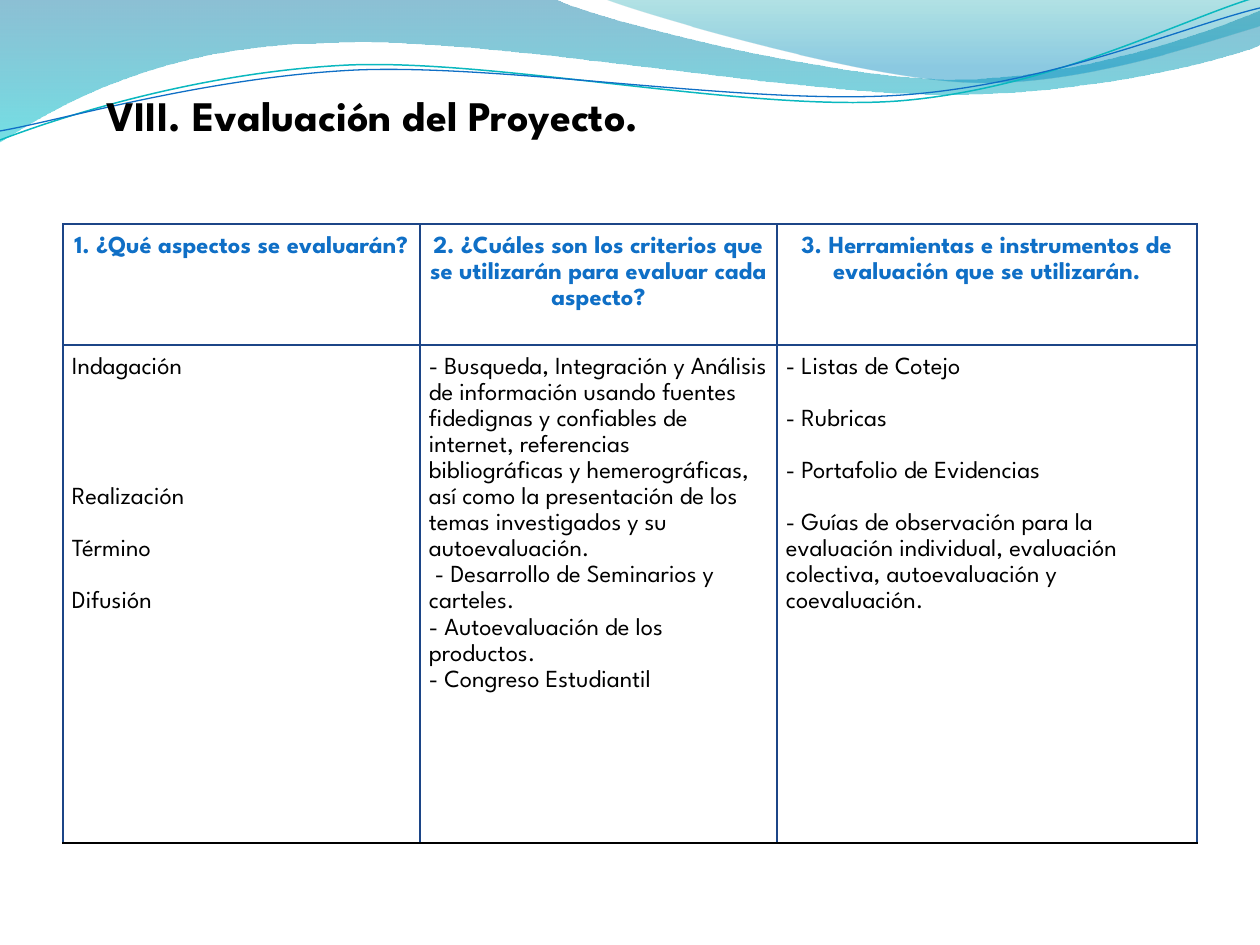
from lxml.etree import SubElement
from pptx import Presentation
from pptx.dml.color import RGBColor
from pptx.enum.text import MSO_ANCHOR, MSO_AUTO_SIZE, PP_ALIGN
from pptx.oxml.ns import qn
from pptx.util import Emu, Pt

FONT = "League Spartan"
BLUE, NAVY, BLACK = "0F6FC6", "1C4587", "000000"
LINE = 26

BAND = [(0, 0), (554, -1), (600, 21, 837, 79, 955, 79),
        (1075, 79, 1207, 33, 1260, 11), (1261, 45),
        (1239, 55, 1096, 96, 940, 94), (784, 94, 481, 35, 324, 43),
        (163, 45, 58, 105, -1, 142)]
CREST = [(604, -1), (641, 14, 859, 78, 969, 82),
         (1079, 87, 1211, 40, 1260, 26), (1260, 0)]
TEAL = [(0, 140), (60, 117, 199, 72, 349, 65),
        (498, 59, 747, 112, 898, 101), (1050, 89, 1182, 19, 1257, -3)]
DEEP = [(0, 131), (59, 121, 207, 77, 357, 70),
        (508, 64, 752, 106, 903, 95), (1053, 84, 1185, 26, 1260, 8)]

HEADS = ["1. ¿Qué aspectos se evaluarán?",
         "2. ¿Cuáles son los criterios que se utilizarán para evaluar cada aspecto?",
         "3. Herramientas e instrumentos de evaluación que se utilizarán."]
BODY = [
    [("Indagación", 0), ("Realización", 4), ("Término", 1), ("Difusión", 1)],
    [("- Busqueda, Integración y Análisis de información usando fuentes "
      "fidedignas y confiables de internet, referencias bibliográficas y "
      "hemerográficas, así como la presentación de los temas investigados "
      "y su autoevaluación.", 0),
     (" - Desarrollo de Seminarios y carteles.", 0),
     ("- Autoevaluación de los productos.", 0),
     ("- Congreso Estudiantil", 0)],
    [("- Listas de Cotejo", 0), ("- Rubricas", 1),
     ("- Portafolio de Evidencias", 1),
     ("- Guías de observación para la evaluación individual, evaluación "
      "colectiva, autoevaluación y coevaluación.", 1)],
]


def px(num):
    """Turn pixels into EMU."""
    return Emu(round(num * 914400 / 126))


def tint(code):
    """Turn a hex string into a colour."""
    return RGBColor.from_string(code)


def bend(shape, steps):
    """Turn the straight segments of six-value steps into cubic curves."""
    legs = list(shape._element.iter(qn("a:lnTo")))
    for leg, step in zip(legs, steps[1:]):
        if len(step) == 6:
            leg.tag = qn("a:cubicBezTo")
            leg.remove(leg[0])
            for x, y in zip(step[::2], step[1::2]):
                SubElement(leg, qn("a:pt"), x=str(px(x) - shape.left),
                           y=str(px(y) - shape.top))


def add_curve(slide, steps, close):
    """Draw a curved outline without a shadow."""
    ends = [(px(step[-2]), px(step[-1])) for step in steps]
    pen = slide.shapes.build_freeform(*ends[0])
    pen.add_line_segments(ends[1:], close=close)
    shape = pen.convert_to_shape()
    shape.shadow.inherit = False
    bend(shape, steps)
    return shape


def add_wave(slide, steps, stops):
    """Draw a wave with a see-through gradient from top to bottom."""
    wave = add_curve(slide, steps, True)
    wave.line.fill.background()
    wave.fill.gradient()
    wave.fill.gradient_angle = 270
    for stop, (place, code, alpha) in zip(wave.fill.gradient_stops, stops):
        stop.position = place
        stop.color.rgb = tint(code)
    tags = list(wave._element.spPr.iter(qn("a:srgbClr")))
    for tag, (place, code, alpha) in zip(tags, stops):
        SubElement(tag, qn("a:alpha"), val=str(alpha * 1000))


def add_thread(slide, steps, code, width):
    """Draw a thin open curve."""
    thread = add_curve(slide, steps, False)
    thread.fill.background()
    thread.line.color.rgb = tint(code)
    thread.line.width = Pt(width)


def write(frame, items, size, code, bold=False, align=PP_ALIGN.LEFT):
    """Fill a frame with paragraphs, each with its gap in lines."""
    for num, (text, gap) in enumerate(items):
        para = frame.add_paragraph() if num else frame.paragraphs[0]
        para.alignment = align
        para.line_spacing = 1.15
        if gap:
            para.space_before = px(gap * LINE)
        run = para.add_run()
        run.text = text
        run.font.name = FONT
        run.font.size = Pt(size)
        run.font.bold = bold
        run.font.color.rgb = tint(code)


def add_title(slide, text):
    """Add the heading."""
    frame = slide.shapes.add_textbox(px(94), px(76), px(626), px(72)).text_frame
    frame.word_wrap = False
    frame.auto_size = MSO_AUTO_SIZE.SHAPE_TO_FIT_TEXT
    write(frame, [(text, 0)], 24, BLACK, True)


def style(cell, base):
    """Set margins, borders and an empty fill on a cell."""
    cell.margin_left = cell.margin_right = px(9)
    cell.margin_top = cell.margin_bottom = px(9)
    cell.vertical_anchor = MSO_ANCHOR.TOP
    props = cell._tc.get_or_add_tcPr()
    for side, code in zip("LRTB", (NAVY, NAVY, NAVY, base)):
        edge = SubElement(props, qn("a:ln" + side), w=str(Pt(1)))
        SubElement(SubElement(edge, qn("a:solidFill")), qn("a:srgbClr"), val=code)
    cell.fill.background()


def add_grid(slide):
    """Add the evaluation table."""
    cols, rows = (357, 357, 420), (121, 498)
    table = slide.shapes.add_table(len(rows), len(cols), px(63), px(224),
                                   px(sum(cols)), px(sum(rows))).table
    table.first_row = table.horz_banding = False
    for row, high in zip(table.rows, rows):
        row.height = px(high)
    for num, wide in enumerate(cols):
        table.columns[num].width = px(wide)
        head, body = table.cell(0, num), table.cell(1, num)
        style(head, NAVY)
        style(body, BLACK)
        write(head.text_frame, [(HEADS[num], 0)], 14, BLUE, True, PP_ALIGN.CENTER)
        write(body.text_frame, BODY[num], 14, BLACK)


def main():
    """Build the slide."""
    deck = Presentation()
    deck.slide_width, deck.slide_height = px(1260), px(945)
    slide = deck.slides.add_slide(deck.slide_layouts[6])
    add_wave(slide, BAND, [(0, "0074A1", 45), (1, "00C6CF", 55)])
    add_wave(slide, CREST, [(0, "00A1A9", 30), (0.8, "008BBF", 45)])
    add_thread(slide, TEAL, "0AB8BF", 0.85)
    add_thread(slide, DEEP, BLUE, 0.75)
    add_title(slide, "VIII. Evaluación del Proyecto.")
    add_grid(slide)
    deck.save("out.pptx")


if __name__ == "__main__":
    main()
